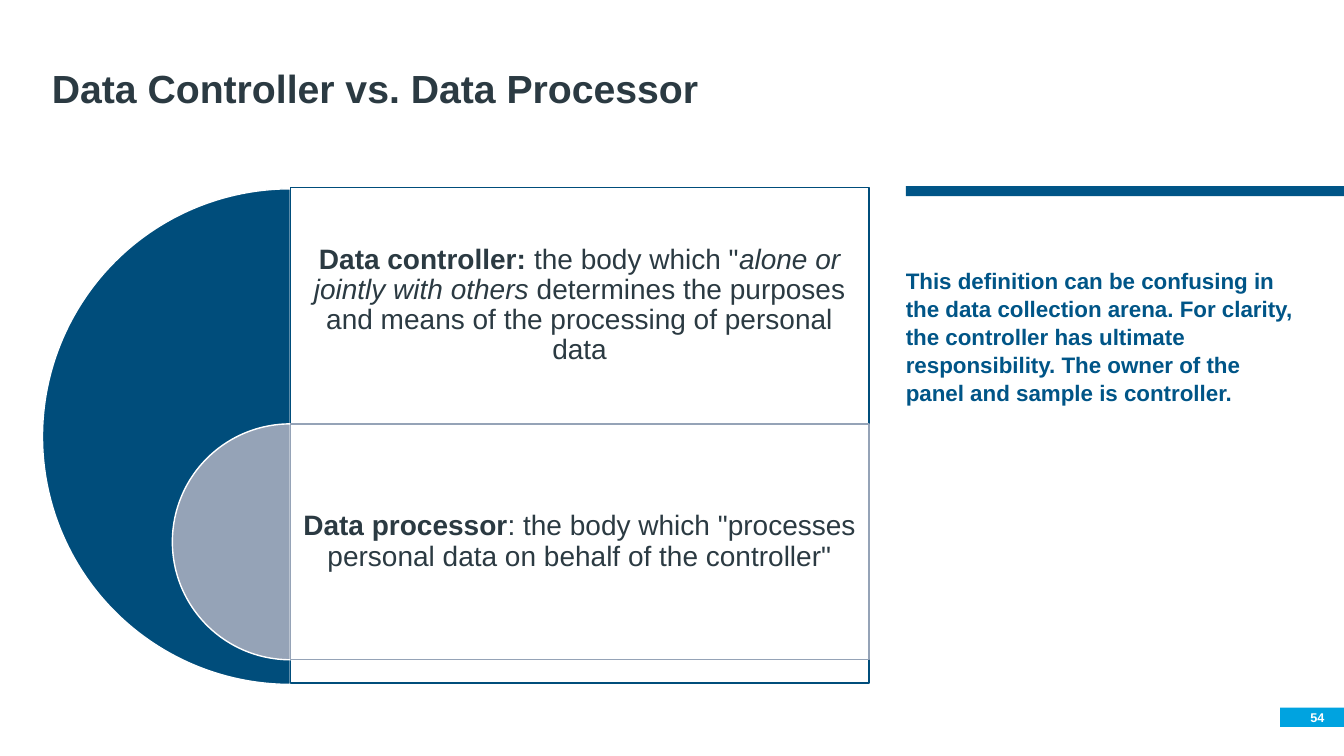
from pptx import Presentation
from pptx import util as u
from pptx.dml.color import RGBColor
from pptx.enum import shapes, text
from pptx.oxml import parse_xml
from pptx.oxml.ns import nsdecls

FONT = "Arial"
INK, BLUE, SKY, WHITE = "2B3A42", "005587", "00A3E0", "FFFFFF"
NAVY, GREY = "004D7B", "95A3B7"
PANEL_LEFT, PANEL_WIDTH, PANEL_HEIGHT = 207.4, 413.3, 168.5
PANEL_INSETS = (6, 6, 6, 6)


def colour(value):
    return RGBColor.from_string(value)


def add_shape(slide, kind, box, fill, line=None, opacity=None):
    """Draw a preset shape; box is left, top, width, height in points."""
    shape = slide.shapes.add_shape(kind, *map(u.Pt, box))
    shape.shadow.inherit = False
    shape.fill.solid()
    shape.fill.fore_color.rgb = colour(fill)
    if opacity is not None:
        alpha = parse_xml(f'<a:alpha {nsdecls("a")} val="{opacity * 1000}"/>')
        shape.fill._xPr.solidFill.srgbClr.append(alpha)
    if line:
        shape.line.color.rgb = colour(line)
        shape.line.width = u.Pt(1)
    else:
        shape.line.fill.background()
    return shape


def add_half_disc(slide, top, diameter, fill):
    """Draw the left half of a disc whose flat side meets the panels."""
    box = (PANEL_LEFT - diameter / 2, top, diameter, diameter)
    disc = add_shape(slide, shapes.MSO_SHAPE.PIE, box, fill, line=WHITE)
    disc.adjustments[0], disc.adjustments[1] = 54, 162


def add_panel(slide, top, height, line):
    box = (PANEL_LEFT, top, PANEL_WIDTH, height)
    return add_shape(slide, shapes.MSO_SHAPE.RECTANGLE, box, WHITE, line, opacity=90)


def add_text_box(slide, box):
    return slide.shapes.add_textbox(*map(u.Pt, box))


def write(shape, runs, *, size, color=INK, align="LEFT", anchor="TOP",
          spacing=1.0, insets=(0, 0, 0, 0)):
    """Fill a shape with (text, style) runs; style holds b and/or i."""
    frame = shape.text_frame
    frame.word_wrap = True
    frame.vertical_anchor = text.MSO_ANCHOR[anchor]
    (frame.margin_left, frame.margin_top,
     frame.margin_right, frame.margin_bottom) = map(u.Pt, insets)
    paragraph = frame.paragraphs[0]
    paragraph.alignment = text.PP_ALIGN[align]
    paragraph.line_spacing = spacing
    for words, style in runs:
        run = paragraph.add_run()
        run.text = words
        run.font.name = FONT
        run.font.size = u.Pt(size)
        run.font.color.rgb = colour(color)
        run.font.bold = "b" in style
        run.font.italic = "i" in style


def add_definitions(slide):
    controller_top, processor_top = 133.9, 302.8
    add_half_disc(slide, 134.9, 354, NAVY)
    add_panel(slide, controller_top, 354, NAVY)
    controller = add_text_box(
        slide, (PANEL_LEFT, controller_top, PANEL_WIDTH, PANEL_HEIGHT))
    add_half_disc(slide, processor_top, PANEL_HEIGHT, GREY)
    processor = add_panel(slide, processor_top, PANEL_HEIGHT, GREY)

    definitions = (
        (controller, [
            ("Data controller:", "b"),
            (' the body which "', ""),
            ("alone or jointly with others", "i"),
            (" determines the purposes and means of the processing of personal data", ""),
        ]),
        (processor, [
            ("Data processor", "b"),
            (': the body which "processes personal data on behalf of the controller"', ""),
        ]),
    )
    for shape, runs in definitions:
        write(shape, runs, size=20, align="CENTER", anchor="MIDDLE",
              spacing=0.9, insets=PANEL_INSETS)


def main():
    presentation = Presentation()
    presentation.slide_width, presentation.slide_height = u.Pt(960), u.Pt(540)
    slide = presentation.slides.add_slide(presentation.slide_layouts[6])
    rectangle = shapes.MSO_SHAPE.RECTANGLE

    add_shape(slide, rectangle, (647, 133, 313, 7.2), BLUE)
    page_tag = add_shape(slide, rectangle, (914.4, 505.5, 45.6, 13.7), SKY)
    write(page_tag, [("54", "b")], size=9, color=WHITE, align="RIGHT",
          anchor="MIDDLE", insets=(0, 0, 14, 0))

    add_definitions(slide)

    note = add_text_box(slide, (647, 189.6, 282.5, 105))
    write(note, [("This definition can be confusing in the data collection arena. "
                  "For clarity, the controller has ultimate responsibility. "
                  "The owner of the panel and sample is controller.", "b")],
          size=16, color=BLUE, spacing=1.05)

    title = add_text_box(slide, (30, 23, 893, 60.5))
    write(title, [("Data Controller vs. Data Processor", "b")], size=28,
          anchor="BOTTOM", spacing=0.9, insets=(7.2, 3.6, 7.2, 3.6))

    presentation.save("out.pptx")


if __name__ == "__main__":
    main()
